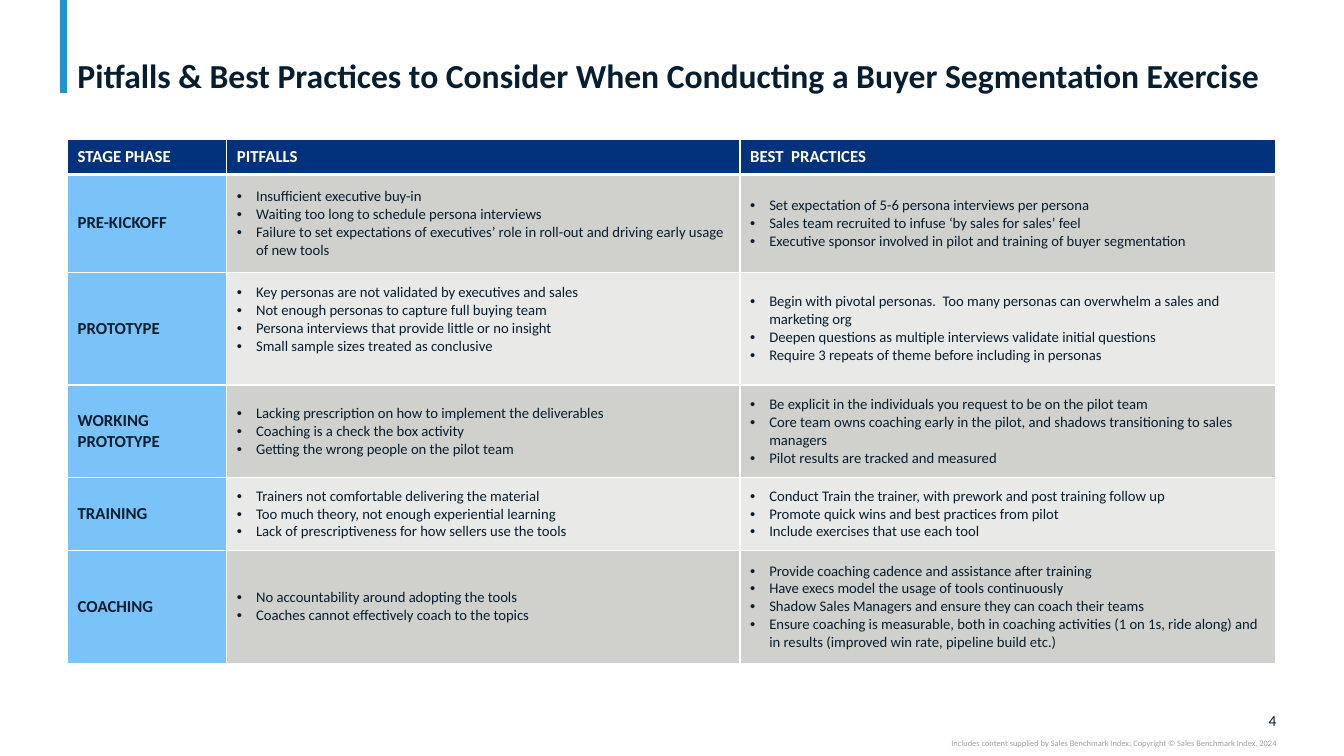
import pptx
import pptx.util
import pptx.dml.color
import pptx.enum.shapes
import pptx.enum.text
import pptx.oxml
import pptx.oxml.ns
from lxml import etree

Inches = pptx.util.Inches
Pt = pptx.util.Pt
ALIGN = pptx.enum.text.PP_ALIGN
ANCHOR = pptx.enum.text.MSO_ANCHOR
qn = pptx.oxml.ns.qn

FONT = "Calibri"
COLORS = {
    "ink": "071E31", "white": "FFFFFF", "accent": "2391CF", "muted": "A0A0A0",
    "header": "03327C", "phase": "7AC3F8", "band_dark": "D0D0CC", "band_light": "E9E9E7",
}
COLUMN_WIDTHS = [1.58, 5.09, 5.31]
HEADER_HEIGHT = 0.35
HEADINGS = ["STAGE PHASE", "PITFALLS", "BEST  PRACTICES"]
# Phase, row height, pitfalls, best practices
PHASES = [
    ("PRE-KICKOFF", 0.97,
     ["Insufficient executive buy-in",
      "Waiting too long to schedule persona interviews",
      "Failure to set expectations of executives’ role in roll-out and driving early usage of new tools"],
     ["Set expectation of 5-6 persona interviews per persona",
      "Sales team recruited to infuse ‘by sales for sales’ feel",
      "Executive sponsor involved in pilot and training of buyer segmentation"]),
    ("PROTOTYPE", 1.12,
     ["Key personas are not validated by executives and sales",
      "Not enough personas to capture full buying team",
      "Persona interviews that provide little or no insight",
      "Small sample sizes treated as conclusive"],
     ["Begin with pivotal personas.  Too many personas can overwhelm a sales and marketing org",
      "Deepen questions as multiple interviews validate initial questions",
      "Require 3 repeats of theme before including in personas"]),
    ("WORKING PROTOTYPE", 0.92,
     ["Lacking prescription on how to implement the deliverables",
      "Coaching is a check the box activity",
      "Getting the wrong people on the pilot team"],
     ["Be explicit in the individuals you request to be on the pilot team",
      "Core team owns coaching early in the pilot, and shadows transitioning to sales managers",
      "Pilot results are tracked and measured"]),
    ("TRAINING", 0.72,
     ["Trainers not comfortable delivering the material",
      "Too much theory, not enough experiential learning",
      "Lack of prescriptiveness for how sellers use the tools"],
     ["Conduct Train the trainer, with prework and post training follow up",
      "Promote quick wins and best practices from pilot",
      "Include exercises that use each tool"]),
    ("COACHING", 1.12,
     ["No accountability around adopting the tools",
      "Coaches cannot effectively coach to the topics"],
     ["Provide coaching cadence and assistance after training",
      "Have execs model the usage of tools continuously",
      "Shadow Sales Managers and ensure they can coach their teams",
      "Ensure coaching is measurable, both in coaching activities (1 on 1s, ride along) and "
      "in results (improved win rate, pipeline build etc.)"]),
]


def rgb(name):
    return pptx.dml.color.RGBColor.from_string(COLORS[name])


def add_span(para, text, size, color, bold=False):
    span = para.add_run()
    span.text = text
    span.font.name = FONT
    span.font.size = Pt(size)
    span.font.bold = bold
    span.font.color.rgb = rgb(color)


def add_text(page, box, text, size, color, bold=False, align=ALIGN.LEFT,
             anchor=ANCHOR.TOP, side_margin=0):
    frame = page.shapes.add_textbox(*map(Inches, box)).text_frame
    frame.word_wrap = True
    frame.vertical_anchor = anchor
    frame.margin_left = frame.margin_right = Inches(side_margin)
    frame.margin_top = frame.margin_bottom = 0
    para = frame.paragraphs[0]
    para.alignment = align
    add_span(para, text, size, color, bold)
    return para


def add_bullet(para):
    props = para._p.get_or_add_pPr()
    props.set("marL", str(Inches(0.19)))
    props.set("indent", str(Inches(-0.19)))
    color = etree.SubElement(props, qn("a:buClr"))
    etree.SubElement(color, qn("a:srgbClr"), val=COLORS["ink"])
    etree.SubElement(props, qn("a:buFont"), typeface="Arial")
    etree.SubElement(props, qn("a:buChar"), char="•")


def style_cell(cell, fill, top=1, bottom=1):
    cell.vertical_anchor = ANCHOR.MIDDLE
    cell.margin_left = cell.margin_right = Inches(0.1)
    cell.margin_top = cell.margin_bottom = Inches(0.05)
    cell.fill.solid()
    cell.fill.fore_color.rgb = rgb(fill)
    # Borders go before the fill
    props = cell._tc.get_or_add_tcPr()
    for place, (side, width) in enumerate([("L", 1), ("R", 1), ("T", top), ("B", bottom)]):
        line = etree.Element(qn("a:ln" + side), w=str(Pt(width)))
        solid = etree.SubElement(line, qn("a:solidFill"))
        etree.SubElement(solid, qn("a:srgbClr"), val=COLORS["white"])
        props.insert(place, line)


def fill_bullets(cell, items):
    frame = cell.text_frame
    for index, item in enumerate(items):
        para = frame.add_paragraph() if index else frame.paragraphs[0]
        add_bullet(para)
        add_span(para, item, 10.5, "ink")


def add_heading(page, box):
    left, top, width, height = box
    # Accent bar
    bar = page.shapes.add_connector(
        pptx.enum.shapes.MSO_CONNECTOR.STRAIGHT,
        Inches(left - 0.04), Inches(0), Inches(left - 0.04), Inches(0.92))
    bar.line.color.rgb = rgb("accent")
    bar.line.width = Pt(5)
    etree.SubElement(bar._element.spPr, qn("a:effectLst"))
    # Title
    title = add_text(
        page, box,
        "Pitfalls & Best Practices to Consider When Conducting a Buyer Segmentation Exercise",
        24, "ink", bold=True, anchor=ANCHOR.BOTTOM, side_margin=0.1)
    title.line_spacing = 0.9


def add_phase_table(page, box):
    frame = page.shapes.add_table(len(PHASES) + 1, len(COLUMN_WIDTHS), *map(Inches, box))
    table = frame.table
    table.horz_banding = False
    for column, width in zip(table.columns, COLUMN_WIDTHS):
        column.width = Inches(width)
    # Header row
    table.rows[0].height = Inches(HEADER_HEIGHT)
    for column, heading in enumerate(HEADINGS):
        cell = table.cell(0, column)
        style_cell(cell, "header", bottom=3)
        add_span(cell.text_frame.paragraphs[0], heading, 12, "white", True)
    # Phase rows
    for row, (phase, height, pitfalls, practices) in enumerate(PHASES, start=1):
        table.rows[row].height = Inches(height)
        band = "band_dark" if row % 2 else "band_light"
        for column, fill in enumerate(["phase", band, band]):
            style_cell(table.cell(row, column), fill, top=3 if row == 1 else 1)
        add_span(table.cell(row, 0).text_frame.paragraphs[0], phase, 12, "ink", True)
        fill_bullets(table.cell(row, 1), pitfalls)
        fill_bullets(table.cell(row, 2), practices)
    # The prototype pitfalls sit slightly above the middle
    table.cell(2, 1).margin_bottom = Inches(0.23)


def add_footer(page, box):
    left, top, width, height = box
    right = left + width
    add_text(page, (right - 0.33, top, 0.33, 0.19), "4", 11, "ink",
             align=ALIGN.RIGHT, anchor=ANCHOR.MIDDLE)
    add_text(page, (left, top + 0.27, width, 0.1),
             "Includes content supplied by Sales Benchmark Index; "
             "Copyright © Sales Benchmark Index, 2024",
             6, "muted", align=ALIGN.RIGHT)


def main():
    deck = pptx.Presentation()
    deck.slide_width = Inches(13.33)
    deck.slide_height = Inches(7.5)
    page = deck.slides.add_slide(deck.slide_layouts[6])
    add_heading(page, (0.67, 0.11, 11.99, 0.84))
    add_phase_table(page, (0.67, 1.38, 11.99, 5.21))
    add_footer(page, (7.5, 7.05, 5.16, 0.37))
    deck.save("out.pptx")


if __name__ == "__main__":
    main()
